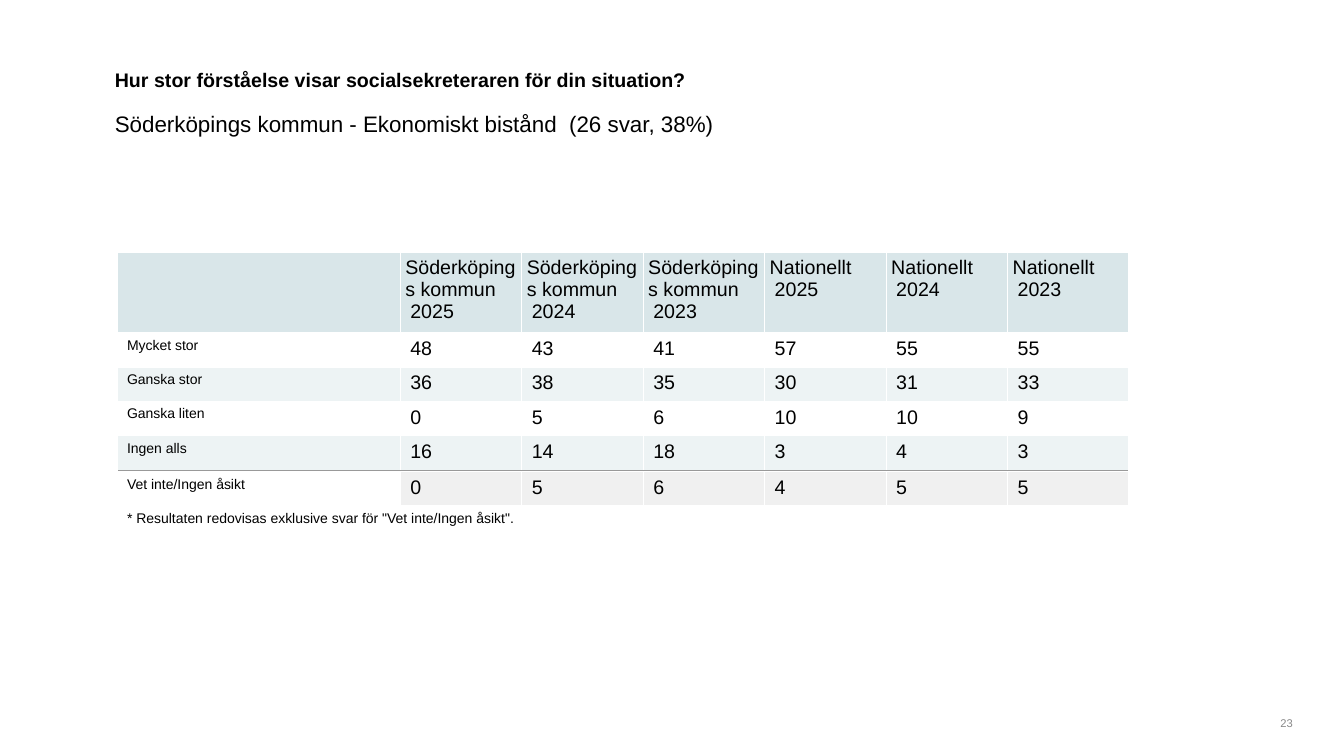
from pptx import Presentation
from pptx.dml.color import RGBColor
from pptx.enum.text import MSO_ANCHOR, PP_ALIGN
from pptx.oxml import parse_xml
from pptx.oxml.ns import nsdecls
from pptx.util import Inches, Pt


def color(value):
    return RGBColor.from_string(value)


def add_run(p, text, size, rgb="000000", bold=False):
    r = p.add_run()
    r.text = text
    r.font.name = "Arial"
    r.font.size = Pt(size)
    r.font.bold = bold
    r.font.color.rgb = color(rgb)


prs = Presentation()
prs.slide_width, prs.slide_height = Inches(13.33), Inches(7.5)
s = prs.slides.add_slide(prs.slide_layouts[6])

# Title, subtitle and page number
TOP, BOTTOM = MSO_ANCHOR.TOP, MSO_ANCHOR.BOTTOM
LEFT, RIGHT = PP_ALIGN.LEFT, PP_ALIGN.RIGHT
texts = [
    ("Hur stor förståelse visar socialsekreteraren för din situation?",
     (1.04, 0.62, 11.25, 0.42), 14, "000000", True, TOP, LEFT),
    ("Söderköpings kommun - Ekonomiskt bistånd  (26 svar, 38%)",
     (1.04, 1.04, 11.25, 0.42), 16, "000000", False, TOP, LEFT),
    ("23", (12.5, 7.08, 0.42, 0.21), 8, "898989", False, BOTTOM, RIGHT),
]
for text, box, size, rgb, bold, anchor, align in texts:
    tf = s.shapes.add_textbox(*[Inches(v) for v in box]).text_frame
    tf.word_wrap = True
    tf.vertical_anchor = anchor
    p = tf.paragraphs[0]
    p.alignment = align
    add_run(p, text, size, rgb, bold)

# Table content: row height, fill of label cell, fill of value cells, texts
header = [""] + [f"{area}\n{year}" for area in ("Söderköpings kommun", "Nationellt")
                 for year in (2025, 2024, 2023)]
note = '* Resultaten redovisas exklusive svar för "Vet inte/Ingen åsikt".'
rows = [
    (0.8, "D9E6E9", "D9E6E9", header),
    (0.34, None, None, ["Mycket stor", 48, 43, 41, 57, 55, 55]),
    (0.34, "EDF3F4", "EDF3F4", ["Ganska stor", 36, 38, 35, 30, 31, 33]),
    (0.34, None, None, ["Ganska liten", 0, 5, 6, 10, 10, 9]),
    (0.34, "EDF3F4", "EDF3F4", ["Ingen alls", 16, 14, 18, 3, 4, 3]),
    (0.02, "999999", "999999", [""] * 7),
    (0.34, None, "F0F0F0", ["Vet inte/Ingen åsikt", 0, 5, 6, 4, 5, 5]),
    (0.34, None, None, [note] + [""] * 6),
]
RULE, NOTE = 5, 7
label_w, table_w = 2.81, 10.04

table = s.shapes.add_table(len(rows), 7, Inches(1.16), Inches(2.5), Inches(table_w),
                           Inches(sum(row[0] for row in rows))).table
table.first_row = table.horz_banding = False
for i, col in enumerate(table.columns):
    col.width = Inches((table_w - label_w) / 6 if i else label_w)

for i, (height, label_fill, value_fill, values) in enumerate(rows):
    table.rows[i].height = Inches(height)
    for j, value in enumerate(values):
        cell = table.cell(i, j)
        margin = Inches(0 if i == RULE else 0.05)
        cell.margin_left = cell.margin_right = margin
        cell.margin_top = cell.margin_bottom = margin

        # White cell borders, left out above the grey rule
        tcPr = cell._tc.get_or_add_tcPr()
        for side in "LRTB":
            if (i, side) in ((RULE - 1, "B"), (RULE, "T")):
                line = "<a:noFill/>"
            else:
                line = '<a:solidFill><a:srgbClr val="FFFFFF"/></a:solidFill>'
            tcPr.append(parse_xml(
                f'<a:ln{side} w="12700" {nsdecls("a")}>{line}</a:ln{side}>'))

        fill = value_fill if j else label_fill
        if fill:
            cell.fill.solid()
            cell.fill.fore_color.rgb = color(fill)
        else:
            cell.fill.background()

        # One paragraph per line; the year and all body text are indented
        tf = cell.text_frame
        for k, text in enumerate(str(value).split("\n")):
            p = tf.add_paragraph() if k else tf.paragraphs[0]
            if i or k:
                p._p.get_or_add_pPr().set("marL", str(Inches(0.05)))
            if text:
                add_run(p, text, 14 if j else 10)
            else:
                p.font.size = Pt(1)

# Full-width rows
for i in (RULE, NOTE):
    table.cell(i, 0).merge(table.cell(i, 6))

prs.save("out.pptx")
